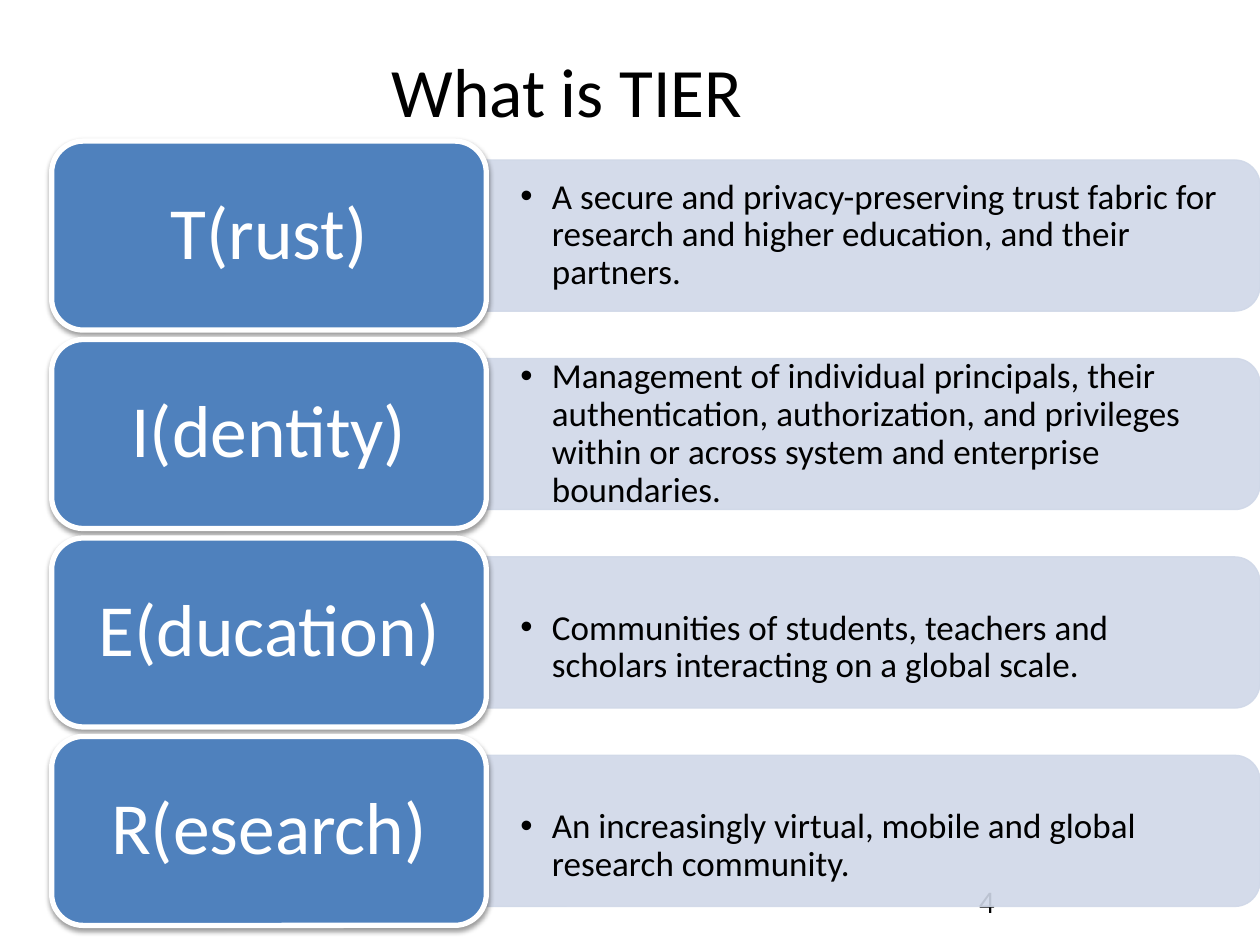
"""Build the slide that spells out the four letters of TIER."""
from lxml.etree import SubElement
from pptx import Presentation
from pptx.dml.color import RGBColor
from pptx.enum.shapes import MSO_SHAPE as SHAPE
from pptx.enum.text import MSO_ANCHOR as ANCHOR, PP_ALIGN as ALIGN
from pptx.oxml.ns import qn
from pptx.util import Inches, Pt

TITLE = "What is TIER"
PAGE_NUMBER = "4"
ROWS = [
    ("T(rust)", "A secure and privacy-preserving trust fabric for research "
     "and higher education, and their partners.", 0),
    ("I(dentity)", "Management of individual principals, their authentication, "
     "authorization, and privileges within or across system and enterprise boundaries.", 0),
    ("E(ducation)", "Communities of students, teachers and scholars "
     "interacting on a global scale.", 0.12),
    ("R(esearch)", "An increasingly virtual, mobile and global research community.", 0.12),
]
BLACK, WHITE, BLUE, PALE = "000000", "FFFFFF", "4F81BD", "D0D8E8"
ROW_TOP, ROW_PITCH = 1.12, 1.575
CARD_LEFT, CARD_WIDTH, CARD_HEIGHT = 0.41, 3.45, 1.5
BAR_LENGTH, BAR_HEIGHT = 6.14, 1.2
TEXT_WIDTH, TEXT_HEIGHT = 6.08, 1.08


def color(value):
    return RGBColor.from_string(value)


def write(shape, text, size, ink, align=ALIGN.LEFT, anchor=ANCHOR.MIDDLE,
          margins=(0.1, 0.05), spacing=1.0, bullet=False):
    frame = shape.text_frame
    side, end = (Inches(margin) for margin in margins)
    settings = {"word_wrap": True, "vertical_anchor": anchor, "margin_left": side,
                "margin_right": side, "margin_top": end, "margin_bottom": end}
    for name, value in settings.items():
        setattr(frame, name, value)
    para = frame.paragraphs[0]
    para.alignment, para.line_spacing = align, spacing
    if bullet:
        props = para._p.get_or_add_pPr()
        props.set("marL", str(Inches(0.25)))
        props.set("indent", str(Inches(-0.25)))
        SubElement(props, qn("a:buFont"), typeface="Arial")
        SubElement(props, qn("a:buChar"), char="•")
    span = para.add_run()
    span.text = text
    for name, value in {"name": "Calibri", "size": Pt(size)}.items():
        setattr(span.font, name, value)
    span.font.color.rgb = color(ink)


def add_panel(page, kind, place, fill, line, width):
    panel = page.shapes.add_shape(kind, *map(Inches, place))
    panel.shadow.inherit = False
    panel.fill.solid()
    panel.fill.fore_color.rgb = color(fill)
    panel.line.color.rgb = color(line)
    panel.line.width = Pt(width)
    return panel


def add_bar(page, middle):
    center = CARD_LEFT + CARD_WIDTH + BAR_LENGTH / 2
    place = (center - BAR_HEIGHT / 2, middle - BAR_LENGTH / 2, BAR_HEIGHT, BAR_LENGTH)
    bar = add_panel(page, SHAPE.ROUND_2_SAME_RECTANGLE, place, PALE, PALE, 0.75)
    bar.rotation = 90
    for tint in bar._element.spPr.iter(qn("a:srgbClr")):
        SubElement(tint, qn("a:alpha"), val="90000")


def add_card(page, top, label):
    place = (CARD_LEFT, top, CARD_WIDTH, CARD_HEIGHT)
    card = add_panel(page, SHAPE.ROUNDED_RECTANGLE, place, BLUE, WHITE, 3)
    effects = card._element.spPr.find(qn("a:effectLst"))
    shadow = SubElement(effects, qn("a:outerShdw"), blurRad=str(Pt(3.1)),
                        dist=str(Pt(1.6)), dir="5400000", rotWithShape="0")
    tint = SubElement(shadow, qn("a:srgbClr"), val=BLACK)
    SubElement(tint, qn("a:alpha"), val="38000")
    write(card, label, 42, WHITE, ALIGN.CENTER, margins=(0.17, 0.09), spacing=0.9)


def add_row(page, index, label, detail, drop):
    top = ROW_TOP + index * ROW_PITCH
    middle = top + CARD_HEIGHT / 2
    add_bar(page, middle)
    place = (CARD_LEFT + CARD_WIDTH, middle - TEXT_HEIGHT / 2 + drop, TEXT_WIDTH, TEXT_HEIGHT)
    box = page.shapes.add_textbox(*map(Inches, place))
    write(box, detail, 20, BLACK, margins=(0.27, 0.14), spacing=0.9, bullet=True)
    add_card(page, top, label)


def main():
    deck = Presentation()
    deck.slide_width, deck.slide_height = Inches(10), Inches(7.5)
    page = deck.slides.add_slide(deck.slide_layouts[5])
    title = page.shapes.title
    for name, value in {"left": 0, "top": 0.3, "width": 9, "height": 0.82}.items():
        setattr(title, name, Inches(value))
    write(title, TITLE, 39.6, BLACK, ALIGN.CENTER)
    number = page.shapes.add_textbox(*map(Inches, (7.67, 6.95, 2.33, 0.4)))
    write(number, PAGE_NUMBER, 18, BLACK, anchor=ANCHOR.TOP)
    for index, row in enumerate(ROWS):
        add_row(page, index, *row)
    deck.save("out.pptx")


if __name__ == "__main__":
    main()
